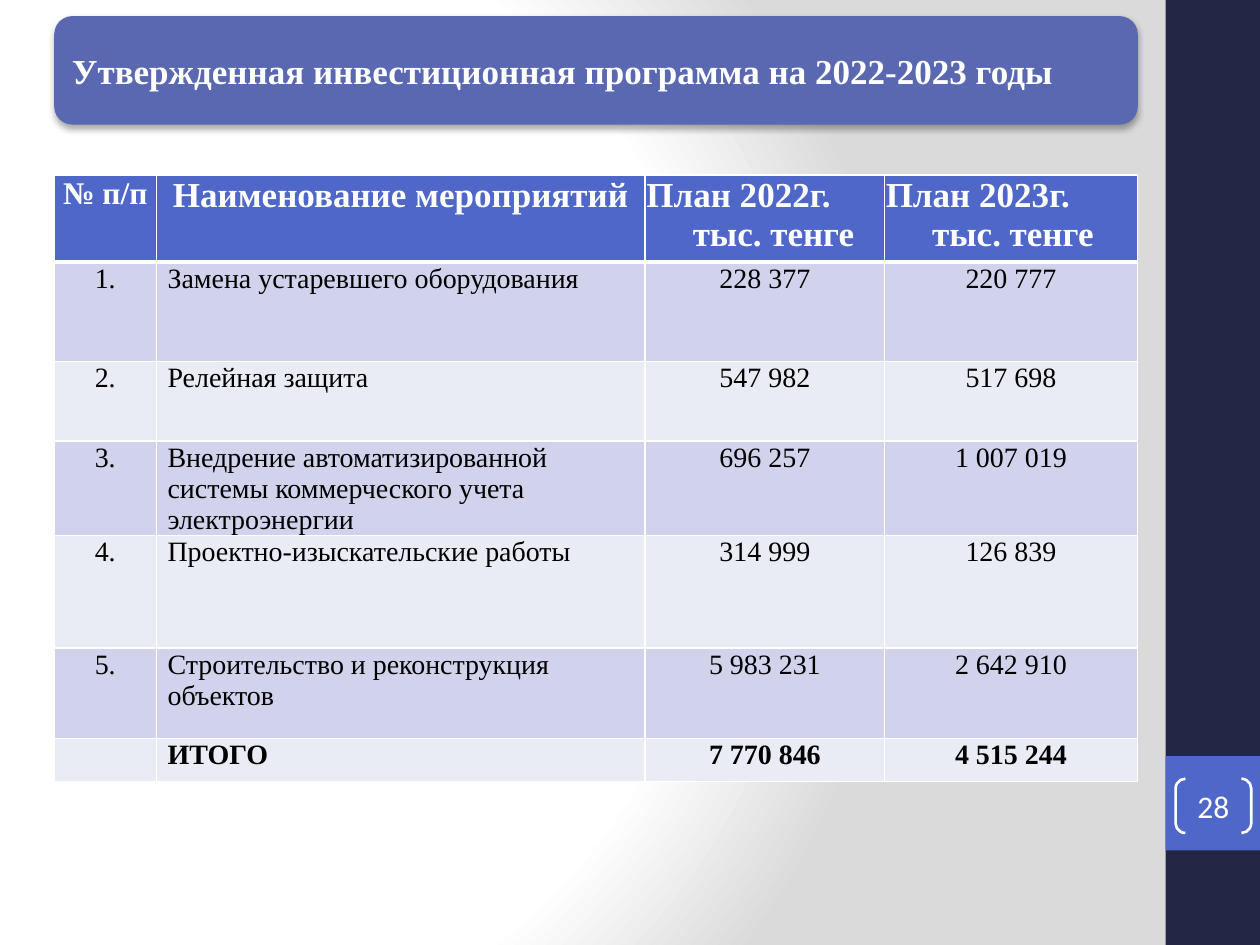
import pptx
import pptx.dml.color
import pptx.enum.shapes
import pptx.enum.text
import pptx.oxml
import pptx.oxml.ns
import pptx.util

Pt = pptx.util.Pt
RGBColor = pptx.dml.color.RGBColor
SHAPE = pptx.enum.shapes.MSO_SHAPE
ALIGN = pptx.enum.text.PP_ALIGN
MIDDLE = pptx.enum.text.MSO_ANCHOR.MIDDLE

WHITE = RGBColor(0xFF, 0xFF, 0xFF)
BLACK = RGBColor(0x00, 0x00, 0x00)
NAVY = RGBColor(0x21, 0x27, 0x45)
BLUE = RGBColor(0x4E, 0x67, 0xC8)
TITLE_BLUE = RGBColor(0x59, 0x68, 0xB0)
BANDS = [RGBColor(0xD0, 0xD3, 0xEB), RGBColor(0xE9, 0xEB, 0xF5)]
NS = pptx.oxml.ns.nsdecls("a", "p")
SERIF = "Times New Roman"

HEADINGS = ["№ п/п", "Наименование мероприятий",
            "План 2022г. тыс. тенге", "План 2023г. тыс. тенге"]
ACTIVITIES = [
    ["1.", "Замена устаревшего оборудования", "228 377", "220 777"],
    ["2.", "Релейная защита", "547 982", "517 698"],
    ["3.", "Внедрение автоматизированной системы коммерческого учета электроэнергии",
     "696 257", "1 007 019"],
    ["4.", "Проектно-изыскательские работы", "314 999", "126 839"],
    ["5.", "Строительство и реконструкция объектов", "5 983 231", "2 642 910"],
    ["", "ИТОГО", "7 770 846", "4 515 244"],
]
COLUMN_WIDTHS = [58.3, 279.4, 136.8, 144.4]
ROW_HEIGHTS = [49.7, 56.9, 45.4, 42.5, 64.1, 51.8, 24.5]


def add_block(preset, left, top, width, height, color=None):
    """Add a shape without outline or shadow; no color means no fill."""
    block = slide.shapes.add_shape(preset, Pt(left), Pt(top), Pt(width), Pt(height))
    block.shadow.inherit = False
    block.line.fill.background()
    if color is None:
        block.fill.background()
    else:
        block.fill.solid()
        block.fill.fore_color.rgb = color
    return block


def add_text(paragraph, text, size, color, align, font=SERIF, bold=False):
    paragraph.alignment = align
    run = paragraph.add_run()
    run.text = text
    run.font.name = font
    run.font.size = Pt(size)
    run.font.bold = bold
    run.font.color.rgb = color


presentation = pptx.Presentation()
presentation.slide_width = Pt(720)
presentation.slide_height = Pt(540)
slide = presentation.slides.add_slide(presentation.slide_layouts[6])

# Background
slide.element.cSld.insert(0, pptx.oxml.parse_xml(
    f'<p:bg {NS}><p:bgPr><a:gradFill rotWithShape="1"><a:gsLst>'
    '<a:gs pos="0"><a:srgbClr val="FFFFFF"/></a:gs>'
    '<a:gs pos="75000"><a:srgbClr val="FFFFFF"/></a:gs>'
    '<a:gs pos="100000"><a:srgbClr val="DADADA"/></a:gs></a:gsLst>'
    '<a:path path="circle"><a:fillToRect l="20000" t="50000" r="100000" b="50000"/>'
    '</a:path></a:gradFill><a:effectLst/></p:bgPr></p:bg>'))

# Side band with the page number
add_block(SHAPE.RECTANGLE, 666, 0, 54, 540, NAVY)
add_block(SHAPE.RECTANGLE, 666, 432, 54, 54, BLUE)
page_number = add_block(SHAPE.DOUBLE_BRACKET, 671.8, 445, 43.2, 31)
page_number.adjustments[0] = 0.18
page_number.line.color.rgb = WHITE
page_number.line.width = Pt(1.5)
number_frame = page_number.text_frame
number_frame.margin_left = number_frame.margin_right = 0
number_frame.margin_top = number_frame.margin_bottom = 0
number_frame.vertical_anchor = MIDDLE
add_text(number_frame.paragraphs[0], "28", 18, WHITE, ALIGN.CENTER, font="Calibri")

# Title
title = add_block(SHAPE.FLOWCHART_ALTERNATE_PROCESS, 31, 9.2, 619.2, 62, TITLE_BLUE)
title_effects = title.element.spPr.find(pptx.oxml.ns.qn("a:effectLst"))
title_effects.append(pptx.oxml.parse_xml(
    f'<a:outerShdw {NS} blurRad="{Pt(3.5)}" dist="{Pt(2.2)}" dir="5400000" rotWithShape="0">'
    '<a:srgbClr val="000000"><a:alpha val="32000"/></a:srgbClr></a:outerShdw>'))
title.text_frame.word_wrap = True
title.text_frame.vertical_anchor = MIDDLE
add_text(title.text_frame.paragraphs[0],
         "Утвержденная инвестиционная программа на 2022-2023 годы",
         20, WHITE, ALIGN.LEFT, bold=True)

# Investment programme
programme = slide.shapes.add_table(
    len(ROW_HEIGHTS), len(COLUMN_WIDTHS), Pt(31), Pt(100.1),
    Pt(sum(COLUMN_WIDTHS)), Pt(sum(ROW_HEIGHTS))).table
programme.horz_banding = False
for column, width in zip(programme.columns, COLUMN_WIDTHS):
    column.width = Pt(width)
for row, height in zip(programme.rows, ROW_HEIGHTS):
    row.height = Pt(height)

for r, entries in enumerate([HEADINGS] + ACTIVITIES):
    is_heading = r == 0
    is_total = r == len(ACTIVITIES)
    for c, text in enumerate(entries):
        cell = programme.cell(r, c)
        is_name = c == 1 and not is_heading
        cell.margin_left = Pt(6.5 if is_name else 0.7)
        cell.margin_top = cell.margin_right = Pt(0.7)
        cell.margin_bottom = 0

        properties = cell._tc.get_or_add_tcPr()
        for side in ("lnL", "lnR", "lnT", "lnB"):
            thick = (r, side) in ((0, "lnB"), (1, "lnT"))
            properties.append(pptx.oxml.parse_xml(
                f'<a:{side} {NS} w="{Pt(3 if thick else 1)}"><a:solidFill>'
                f'<a:srgbClr val="{WHITE}"/></a:solidFill></a:{side}>'))
        cell.fill.solid()
        cell.fill.fore_color.rgb = BLUE if is_heading else BANDS[(r - 1) % 2]

        paragraph = cell.text_frame.paragraphs[0]
        if is_heading:
            is_plan = c >= 2
            add_text(paragraph, text, 18 if c == 0 else 20, WHITE,
                     ALIGN.LEFT if is_plan else ALIGN.CENTER, bold=True)
            if is_plan:  # hanging indent sets the unit off on the second line
                indents = paragraph._p.get_or_add_pPr()
                indents.set("marL", str(Pt(26.5)))
                indents.set("indent", str(-Pt(26.5)))
        elif text:
            add_text(paragraph, text, 16, BLACK,
                     ALIGN.LEFT if is_name else ALIGN.CENTER, bold=is_total)

presentation.save("out.pptx")
